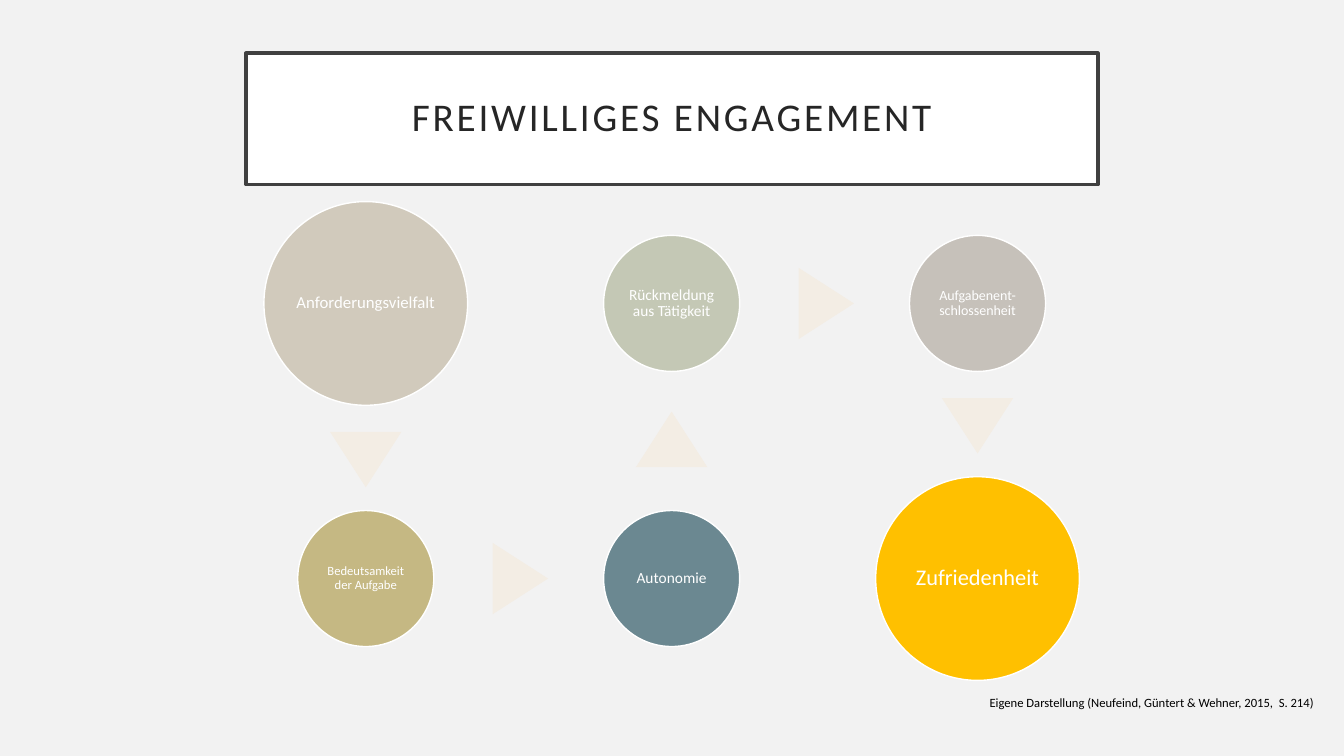
import math
from dataclasses import dataclass

import pptx
import pptx.dml.color
import pptx.enum.shapes
import pptx.enum.text
import pptx.util

Pt = pptx.util.Pt
Shape = pptx.enum.shapes.MSO_SHAPE
Align = pptx.enum.text.PP_ALIGN
Anchor = pptx.enum.text.MSO_ANCHOR


@dataclass(frozen=True)
class Theme:
    font: str = "Calibri"
    back: str = "F2F2F2"
    white: str = "FFFFFF"
    frame: str = "404040"
    head: str = "262626"
    ink: str = "000000"
    arrow: str = "F3EDE4"
    title: int = 28
    note: int = 9


THEME = Theme()
BIG, SMALL = 145.5, 97.2   # circle diameters
BASE, RISE = 51, 39.6      # arrow triangle
NUDGE = 1.2                # arrows sit slightly ahead of the gap's middle

# Label, type size, fill, diameter, column, row, in reading order
STEPS = [
    ("Anforderungsvielfalt", 12, "D1CABC", BIG, 0, 0),
    ("Bedeutsamkeit der Aufgabe", 9, "C5B883", SMALL, 0, 1),
    ("Autonomie", 11, "6B8891", SMALL, 1, 1),
    ("Rückmeldung aus Tätigkeit", 11, "C4C8B5", SMALL, 1, 0),
    ("Aufgabenent-schlossenheit", 10, "C6C1BA", SMALL, 2, 0),
    ("Zufriedenheit", 16, "FFC000", BIG, 2, 1),
]


def rgb(code):
    return pptx.dml.color.RGBColor.from_string(code)


def draw(slide, kind, box, fill, line=None, width=1):
    shape = slide.shapes.add_shape(kind, *map(Pt, box))
    shape.shadow.inherit = False
    shape.fill.solid()
    shape.fill.fore_color.rgb = rgb(fill)
    if line:
        shape.line.color.rgb = rgb(line)
        shape.line.width = Pt(width)
    else:
        shape.line.fill.background()
    return shape


def write(shape, text, size, color, inset, align=Align.CENTER, space=0.9):
    frame = shape.text_frame
    frame.word_wrap = True
    frame.vertical_anchor = Anchor.MIDDLE
    frame.margin_left = frame.margin_right = Pt(inset[0])
    frame.margin_top = frame.margin_bottom = Pt(inset[1])
    para = frame.paragraphs[0]
    para.alignment = align
    para.line_spacing = space
    run = para.add_run()
    run.text = text
    run.font.name = THEME.font
    run.font.size = Pt(size)
    run.font.color.rgb = rgb(color)
    return run


def add_title(slide, box):
    shape = draw(slide, Shape.RECTANGLE, box, THEME.white, THEME.frame, 2.5)
    run = write(shape, "FREIWILLIGES ENGAGEMENT", THEME.title, THEME.head,
                (14.4, 14.4))
    run.font._element.set("spc", "200")  # letter spacing of 2 pt


def add_arrow(slide, start, end):
    """Place a triangle between two circles given as (x, y, diameter)."""
    (ax, ay, ad), (bx, by, bd) = start, end
    span = math.hypot(bx - ax, by - ay)
    ux, uy = (bx - ax) / span, (by - ay) / span
    move = (span + ad / 2 - bd / 2) / 2 + NUDGE
    x, y = ax + ux * move, ay + uy * move
    box = (x - BASE / 2, y - RISE / 2, BASE, RISE)
    shape = draw(slide, Shape.ISOSCELES_TRIANGLE, box, THEME.arrow)
    shape.rotation = round(math.degrees(math.atan2(ux, -uy)))


def add_flow(slide, box):
    left, top, width, height = box
    prior = None
    for label, size, fill, dia, col, row in STEPS:
        x = left + BIG / 2 + col * (width - BIG) / 2
        y = top + BIG / 2 + row * (height - BIG)
        spot = (x, y, dia)
        if prior:
            add_arrow(slide, prior, spot)
        disc = draw(slide, Shape.OVAL, (x - dia / 2, y - dia / 2, dia, dia),
                    fill, THEME.white)
        write(disc, label, size, THEME.white, (1, 1))
        prior = spot


def add_credit(slide, box):
    note = slide.shapes.add_textbox(*map(Pt, box))
    write(note, "Eigene Darstellung (Neufeind, Güntert & Wehner, 2015,  S. 214)",
          THEME.note, THEME.ink, (7.2, 3.6), Align.LEFT, 1.0)


def main():
    deck = pptx.Presentation()
    deck.slide_width, deck.slide_height = Pt(960), Pt(540)
    slide = deck.slides.add_slide(deck.slide_layouts[6])
    slide.background.fill.solid()
    slide.background.fill.fore_color.rgb = rgb(THEME.back)

    add_title(slide, (175.7, 38, 608.6, 93.8))
    add_flow(slide, (188.5, 144, 582.5, 342))
    add_credit(slide, (699.8, 492.5, 254.2, 18))
    deck.save("out.pptx")


if __name__ == "__main__":
    main()
